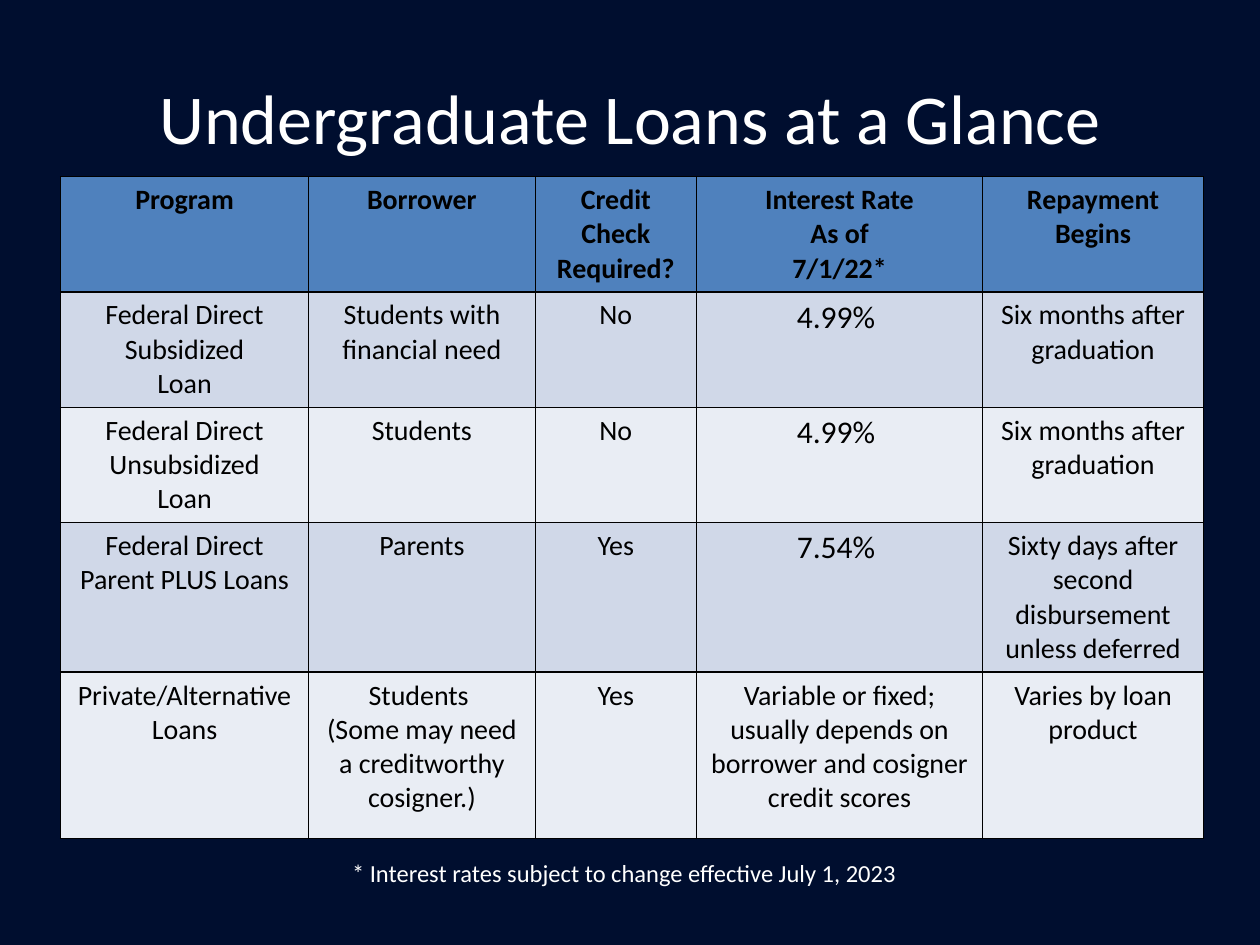
from lxml import etree
from pptx import Presentation
from pptx.dml.color import RGBColor
from pptx.enum.text import MSO_ANCHOR, PP_ALIGN
from pptx.oxml.ns import qn
from pptx.util import Cm, Pt

CENTER = PP_ALIGN.CENTER
MIDDLE = MSO_ANCHOR.MIDDLE
COLORS = {
    "background": "000E2F",
    "light": "FFFFFF",
    "dark": "000000",
    "header": "4F81BD",
    "odd": "D0D8E8",
    "even": "E9EDF4",
}
COLUMN_WIDTHS = [5, 4.57, 3.25, 5.77, 4.45]
ROW_HEIGHTS = [2.24, 2.24, 2.24, 2.9, 3.35]
LOANS = [
    ["Program", "Borrower", "Credit Check Required?",
     "Interest Rate\nAs of\n7/1/22*", "Repayment Begins"],
    ["Federal Direct Subsidized\nLoan", "Students with financial need", "No",
     "4.99% ", "Six months after graduation"],
    ["Federal Direct Unsubsidized\nLoan", "Students", "No",
     "4.99% ", "Six months after graduation"],
    ["Federal Direct Parent PLUS Loans", "Parents", "Yes",
     "7.54% ", "Sixty days after second disbursement unless deferred"],
    ["Private/Alternative Loans",
     "Students \n(Some may need a creditworthy cosigner.)", "Yes",
     "Variable or fixed; usually depends on borrower and cosigner credit scores",
     "Varies by loan product"],
]


def write_text(text_frame, text, size, color, bold=False):
    text_frame.text = text
    text_frame.word_wrap = True
    font_format = {"name": "Calibri", "size": Pt(size), "bold": bold}
    for paragraph in text_frame.paragraphs:
        paragraph.alignment = CENTER
        for run in paragraph.runs:
            for name, value in font_format.items():
                setattr(run.font, name, value)
            run.font.color.rgb = RGBColor.from_string(COLORS[color])


def add_borders(cell):
    properties = cell._tc.get_or_add_tcPr()
    for position, side in enumerate(["a:lnL", "a:lnR", "a:lnT", "a:lnB"]):
        line = etree.Element(qn(side), w=str(Pt(1)))
        fill = etree.SubElement(line, qn("a:solidFill"))
        etree.SubElement(fill, qn("a:srgbClr"), val=COLORS["dark"])
        properties.insert(position, line)


presentation = Presentation()
presentation.slide_width = Cm(25.4)
presentation.slide_height = Cm(19.05)
slide = presentation.slides.add_slide(presentation.slide_layouts[5])
slide.background.fill.solid()
slide.background.fill.fore_color.rgb = RGBColor.from_string(COLORS["background"])

title = slide.shapes.title
title_place = {"left": 1.27, "top": 0.76, "width": 22.86, "height": 3.18}
for name, value in title_place.items():
    setattr(title, name, Cm(value))
write_text(title.text_frame, "Undergraduate Loans at a Glance", 40, "light")
title.text_frame.vertical_anchor = MIDDLE

table = slide.shapes.add_table(
    len(ROW_HEIGHTS), len(COLUMN_WIDTHS), Cm(1.22), Cm(3.56),
    Cm(sum(COLUMN_WIDTHS)), Cm(sum(ROW_HEIGHTS))).table
for column, width in zip(table.columns, COLUMN_WIDTHS):
    column.width = Cm(width)
for row, height in zip(table.rows, ROW_HEIGHTS):
    row.height = Cm(height)

for row_index, loan in enumerate(LOANS):
    is_header = row_index == 0
    fill_name = "header" if is_header else "odd" if row_index % 2 else "even"
    for column_index, text in enumerate(loan):
        cell = table.cell(row_index, column_index)
        cell.fill.solid()
        cell.fill.fore_color.rgb = RGBColor.from_string(COLORS[fill_name])
        size = 18 if "%" in text else 16
        write_text(cell.text_frame, text, size, "dark", is_header)
        add_borders(cell)

footnote = slide.shapes.add_textbox(Cm(6.02), Cm(17.17), Cm(13.13), Cm(0.86))
write_text(footnote.text_frame,
           "* Interest rates subject to change effective July 1, 2023", 14, "light")

presentation.save("out.pptx")
